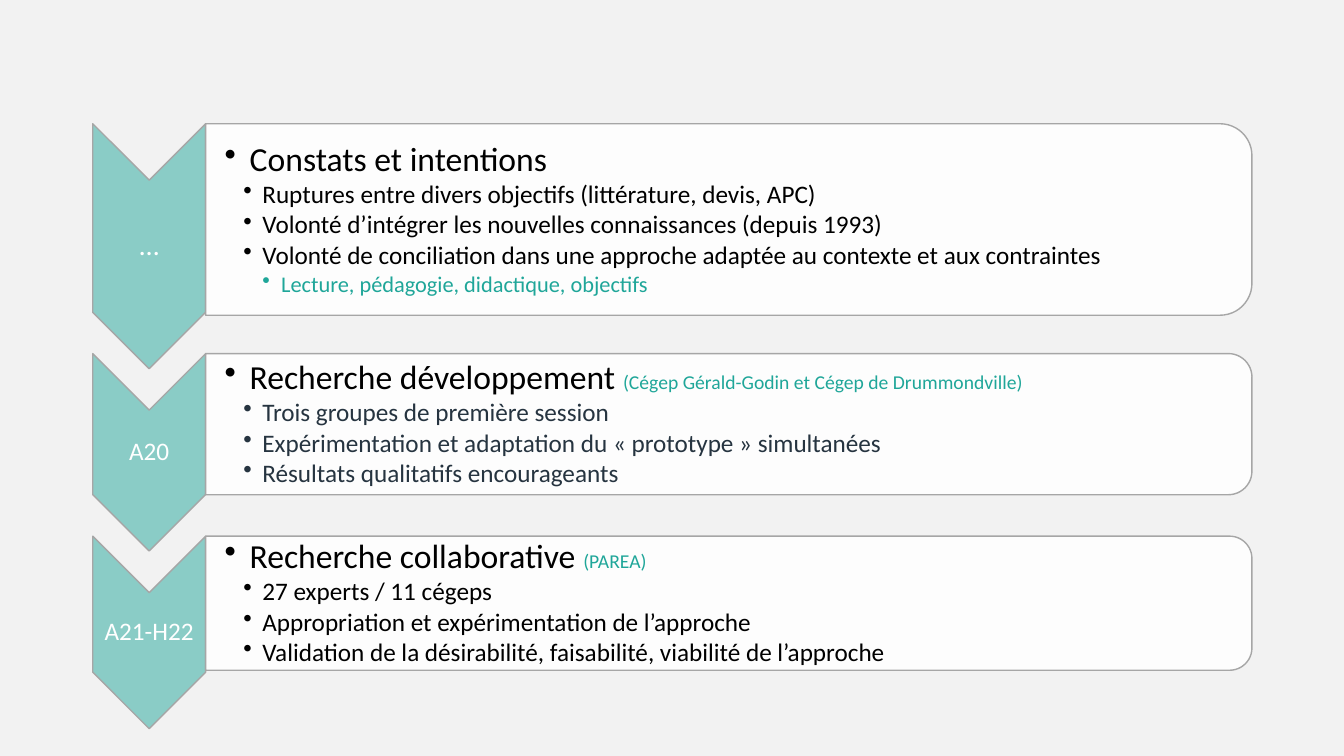
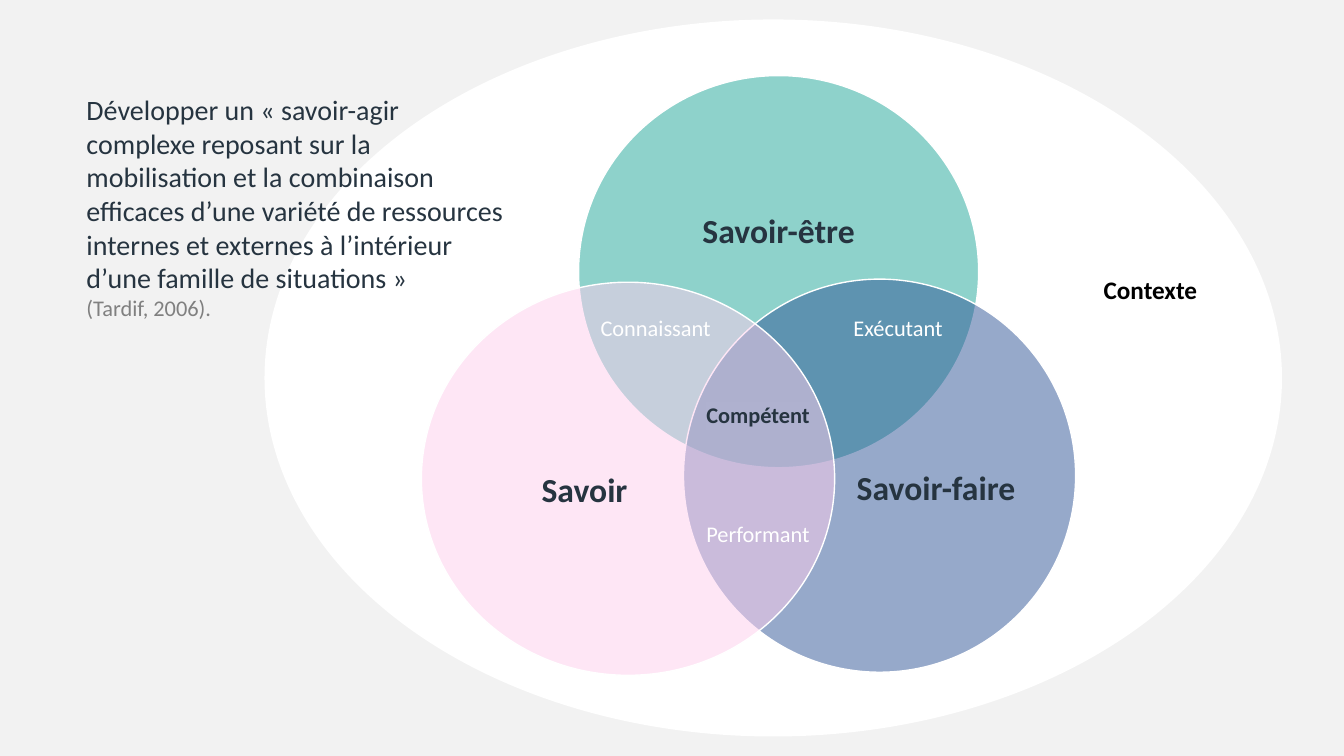
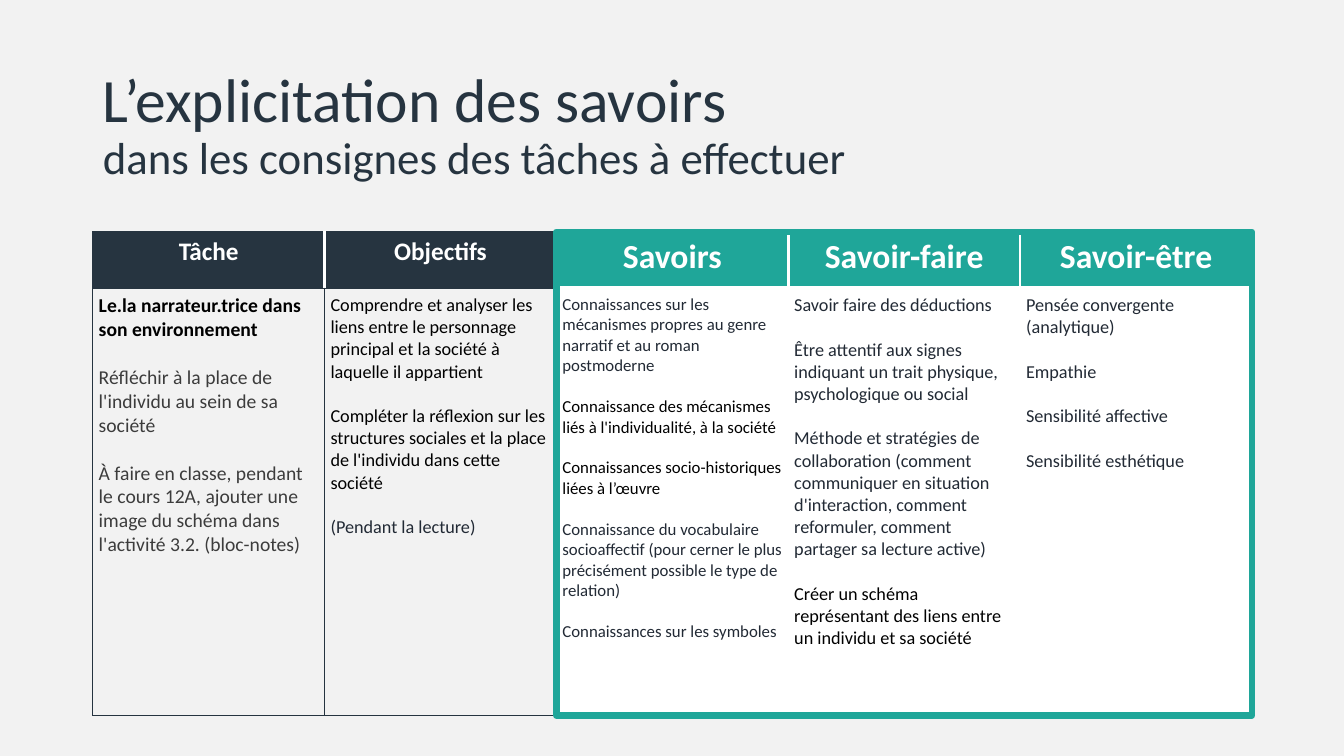
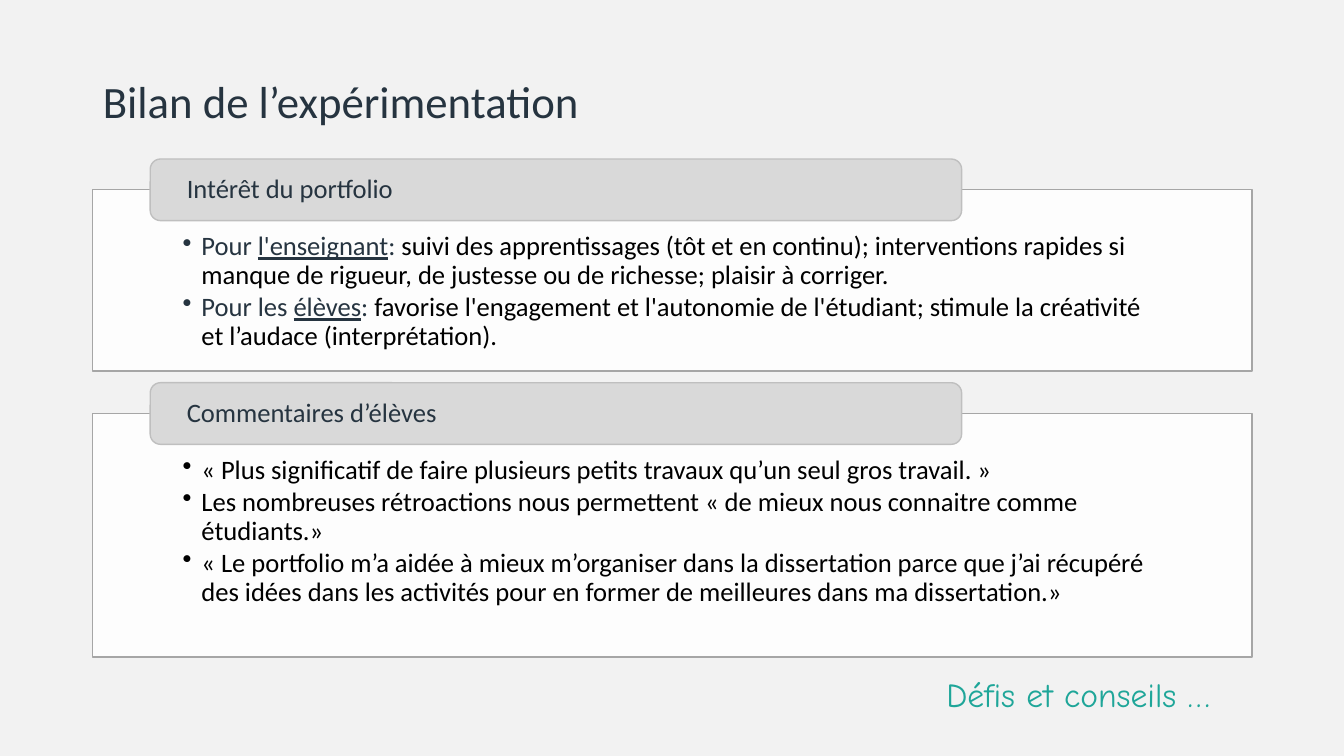
from dataclasses import dataclass, replace

from lxml.etree import SubElement
from pptx import Presentation
from pptx.dml.color import RGBColor
from pptx.enum.shapes import MSO_SHAPE
from pptx.enum.text import MSO_ANCHOR, PP_ALIGN
from pptx.oxml.ns import qn
from pptx.util import Pt

BACKGROUND = RGBColor(0xF2, 0xF2, 0xF2)
TEAL = RGBColor(0x1F, 0xA6, 0x99)
NAVY = RGBColor(0x26, 0x34, 0x40)
INK = RGBColor(0x22, 0x2A, 0x35)
BLUE = RGBColor(0x2F, 0x55, 0x97)
PINK = RGBColor(0xFE, 0xCE, 0xED)
LILAC = RGBColor(0xAF, 0xB1, 0xCF)
WHITE = RGBColor(0xFF, 0xFF, 0xFF)
BLACK = RGBColor(0, 0, 0)
CHARCOAL = RGBColor(0x3C, 0x3C, 0x3C)
GREY = RGBColor(0x80, 0x80, 0x80)
OUTLINE = RGBColor(0xA6, 0xA6, 0xA6)
TAB_FILL = RGBColor(0xD9, 0xD9, 0xD9)
TAB_LINE = RGBColor(0xBF, 0xBF, 0xBF)

TITLE_ONLY, BLANK = 5, 6
LEFT, WIDTH = 66.24, 828
TIGHT = 0.9
BULLET_GAP = 2.3
LINE_HEIGHT = 1.22


@dataclass(frozen=True)
class Style:
    size: float
    color: RGBColor
    bold: bool = False
    underline: bool = False
    font: str = "Calibri"


def set_frame(frame, insets=(7.2, 3.6, 7.2, 3.6), anchor=MSO_ANCHOR.TOP, wrap=True):
    frame.word_wrap = wrap
    frame.vertical_anchor = anchor
    frame.margin_left, frame.margin_top, frame.margin_right, frame.margin_bottom = map(Pt, insets)
    return frame


def format_run(run, style):
    font = run.font
    font.name, font.size = style.font, Pt(style.size)
    font.bold, font.underline = style.bold, style.underline
    font.color.rgb = style.color


def write(frame, *pieces, align=PP_ALIGN.LEFT, spacing=None, before=0):
    paragraph = frame.paragraphs[0]
    if paragraph.runs:
        paragraph = frame.add_paragraph()
        paragraph.space_before = Pt(before)
    paragraph.alignment = align
    if spacing:
        paragraph.line_spacing = spacing
    for text, style in pieces:
        run = paragraph.add_run()
        run.text = text
        format_run(run, style)
    return paragraph


def write_bullet(frame, margin, hanging, *pieces, level=0):
    paragraph = write(frame, *pieces)
    properties = paragraph._p.get_or_add_pPr()
    properties.set("marL", str(Pt(margin)))
    properties.set("indent", str(-Pt(hanging)))
    SubElement(properties, qn("a:buChar"), char="•")
    paragraph.level = level
    paragraph.line_spacing = TIGHT
    paragraph.space_after = Pt(BULLET_GAP)


def add_box(slide, left, top, width, height, **frame_options):
    box = slide.shapes.add_textbox(Pt(left), Pt(top), Pt(width), Pt(height))
    return set_frame(box.text_frame, **frame_options)


def add_block(slide, kind, left, top, width, height, fill, line, line_width=1, opacity=100):
    block = slide.shapes.add_shape(kind, Pt(left), Pt(top), Pt(width), Pt(height))
    block.shadow.inherit = False
    if fill is None:
        block.fill.background()
    else:
        block.fill.solid()
        block.fill.fore_color.rgb = fill
    if opacity < 100:
        color = block._element.spPr.find(qn("a:solidFill"))[0]
        SubElement(color, qn("a:alpha"), val=str(opacity * 1000))
    block.line.color.rgb = line
    block.line.width = Pt(line_width)
    return block


def add_turned_block(slide, kind, left, top, width, height, fill, opacity):
    shift = (width - height) / 2
    block = add_block(slide, kind, left + shift, top - shift, height, width,
                      fill, OUTLINE, opacity=opacity)
    block.rotation = 90


def add_title(slide, top, text, *sizes):
    title = slide.shapes.title
    title.left, title.top, title.width, title.height = map(Pt, (LEFT, top, WIDTH, 104.4))
    frame = set_frame(title.text_frame, anchor=MSO_ANCHOR.MIDDLE)
    frame.text = text
    paragraph = frame.paragraphs[0]
    paragraph.alignment = PP_ALIGN.LEFT
    paragraph.line_spacing = TIGHT
    for run, size in zip(paragraph.runs, sizes):
        format_run(run, Style(size, NAVY))


def add_stage(slide, top, chevron_height, card_height, label, label_size, bullets):
    chevron_width = 80.64
    card_left = LEFT + chevron_width
    card_width = LEFT + WIDTH - card_left
    add_turned_block(slide, MSO_SHAPE.CHEVRON, LEFT, top, chevron_width, chevron_height, TEAL, 49)
    label_frame = add_box(slide, LEFT, top, chevron_width, chevron_height,
                          insets=(0.9,) * 4, anchor=MSO_ANCHOR.MIDDLE)
    write(label_frame, (label, Style(label_size, WHITE)), align=PP_ALIGN.CENTER, spacing=TIGHT)
    add_turned_block(slide, MSO_SHAPE.ROUND_2_SAME_RECTANGLE, card_left, top,
                     card_width, card_height, WHITE, 90)
    card_frame = add_box(slide, card_left, top, card_width, card_height,
                         insets=(13.5, 1.5, 1.5, 1.5), anchor=MSO_ANCHOR.MIDDLE)
    indents = ((18, 18), (27, 13.5), (40.5, 13.5))
    for level, *pieces in bullets:
        write_bullet(card_frame, *indents[level], *pieces, level=level)


def build_stages(slide):
    heading, detail = Style(24, BLACK), Style(18, BLACK)
    source, navy_detail = Style(14, TEAL), Style(18, NAVY)
    add_stage(slide, 88.4, 175, 136.8, "…", 20, [
        (0, ("Constats et intentions", heading)),
        (1, ("Ruptures entre divers objectifs (littérature, devis, APC)", detail)),
        (1, ("Volonté d’intégrer les nouvelles connaissances (depuis 1993)", detail)),
        (1, ("Volonté de conciliation dans une approche adaptée au contexte et aux contraintes", detail)),
        (2, ("Lecture, pédagogie, didactique, objectifs", Style(16, TEAL))),
    ])
    add_stage(slide, 252.6, 141, 100.8, "A20", 18, [
        (0, ("Recherche développement ", heading),
         ("(Cégep Gérald-Godin et Cégep de Drummondville)", source)),
        (1, ("Trois groupes de première session", navy_detail)),
        (1, ("Expérimentation et adaptation du « prototype » simultanées", navy_detail)),
        (1, ("Résultats qualitatifs encourageants", navy_detail)),
    ])
    add_stage(slide, 383, 137.5, 95.8, "A21-H22", 18, [
        (0, ("Recherche collaborative ", heading), ("(PAREA)", source)),
        (1, ("27 experts / 11 cégeps", detail)),
        (1, ("Appropriation et expérimentation de l’approche", detail)),
        (1, ("Validation de la désirabilité, faisabilité, viabilité de l’approche", detail)),
    ])


def add_circle(slide, bounds, fill, label, label_bounds):
    add_block(slide, MSO_SHAPE.OVAL, *bounds, fill, WHITE, opacity=50)
    frame = add_box(slide, *label_bounds, insets=(0,) * 4, anchor=MSO_ANCHOR.MIDDLE)
    write(frame, (label, Style(24, NAVY, bold=True)), align=PP_ALIGN.CENTER, spacing=TIGHT)


def highlight(run, color):
    mark = SubElement(run._r.rPr, qn("a:highlight"))
    SubElement(mark, qn("a:srgbClr"), val=str(color))
    run._r.rPr.find(qn("a:latin")).addprevious(mark)


def build_competence(slide):
    add_block(slide, MSO_SHAPE.OVAL, 189.4, 14.4, 725.8, 511.2, WHITE, WHITE)
    circles = (
        ((413.3, 54, 285.8, 280.1), TEAL, "Savoir-être", (451.4, 103, 209.5, 126)),
        ((488.2, 199.4, 280.1, 280.8), BLUE, "Savoir-faire", (584.7, 272.2, 167.8, 154.8)),
        ((301, 201.6, 295.2, 280.8), PINK, "Savoir", (329, 273.6, 177.1, 154.8)),
    )
    for circle in circles:
        add_circle(slide, *circle)
    overlap = Style(16, WHITE)
    labels = (
        ("Connaissant", 421.9, 221, 121.7, overlap),
        ("Exécutant", 602.6, 221, 100, overlap),
        ("Performant", 497.5, 367.9, 89.3, overlap),
        ("Compétent", 497.5, 283, 100, Style(16, NAVY, bold=True)),
        ("Contexte", 781.2, 192.2, 95, Style(18, BLACK, bold=True)),
    )
    for text, left, top, width, style in labels:
        label = write(add_box(slide, left, top, width, 26.6), (text, style))
        if text == "Compétent":
            highlight(label.runs[0], LILAC)
    definition = add_box(slide, 54.7, 62.6, 316.8, 220.3)
    write(definition, (
        "Développer un « savoir-agir complexe reposant sur la mobilisation et la combinaison "
        "efficaces d’une variété de ressources internes et externes à l’intérieur d’une famille "
        "de situations »", Style(20, NAVY)))
    write(definition, ("(Tardif, 2006).", Style(16, GREY)))


def set_cell(cell, fill, sides):
    properties = cell._tc.get_or_add_tcPr()
    for side, (color, width) in zip("LRTB", sides):
        border = SubElement(properties, qn(f"a:ln{side}"), w=str(Pt(width)))
        solid = SubElement(border, qn("a:solidFill"))
        SubElement(solid, qn("a:srgbClr"), val=str(color))
    cell.fill.solid()
    cell.fill.fore_color.rgb = fill


def build_knowledge_table(slide):
    add_title(slide, 38.2, "L’explicitation des savoirs\vdans les consignes des tâches à effectuer", 44, 32)
    task, goal, knowledge = Style(14, CHARCOAL), Style(13, BLACK), Style(12, INK)
    skill = Style(13, INK)
    known = replace(knowledge, color=BLACK)
    columns = (
        ("Tâche", (
            ("Le.la narrateur.trice dans son environnement", Style(14, BLACK, bold=True)),
            ("Réfléchir à la place de l'individu au sein de sa société", task),
            ("À faire en classe, pendant le cours 12A, ajouter une image du schéma dans "
             "l'activité 3.2. (bloc-notes)", task))),
        ("Objectifs", (
            ("Comprendre et analyser les liens entre le personnage principal et la société à "
             "laquelle il appartient", goal),
            ("Compléter la réflexion sur les structures sociales et la place de l'individu dans "
             "cette société", goal),
            ("(Pendant la lecture)", skill))),
        ("Savoirs", (
            ("Connaissances sur les mécanismes propres au genre narratif et au roman postmoderne",
             knowledge),
            ("Connaissance des mécanismes liés à l'individualité, à la société", known),
            ("Connaissances socio-historiques liées à l’œuvre", known),
            ("Connaissance du vocabulaire socioaffectif (pour cerner le plus précisément possible "
             "le type de relation)", knowledge),
            ("Connaissances sur les symboles", knowledge))),
        ("Savoir-faire", (
            ("Savoir faire des déductions", skill),
            ("Être attentif aux signes indiquant un trait physique, psychologique ou social", skill),
            ("Méthode et stratégies de collaboration (comment communiquer en situation "
             "d'interaction, comment reformuler, comment partager sa lecture active)", skill),
            ("Créer un schéma représentant des liens entre un individu et sa société", goal))),
        ("Savoir-être", tuple((text, skill) for text in (
            "Pensée convergente (analytique)", "Empathie", "Sensibilité affective",
            "Sensibilité esthétique"))),
    )
    top, header_height, body_height = 165.6, 40.32, 305.28
    column_width = WIDTH / len(columns)
    table = slide.shapes.add_table(2, len(columns), Pt(LEFT), Pt(top), Pt(WIDTH),
                                   Pt(header_height + body_height)).table
    table.horz_banding = False
    table.rows[0].height, table.rows[1].height = Pt(header_height), Pt(body_height)
    thin, gap, rule = (NAVY, 1), (WHITE, 2.25), (WHITE, 3)
    for index, (heading, entries) in enumerate(columns):
        table.columns[index].width = Pt(column_width)
        header, body = table.cell(0, index), table.cell(1, index)
        framed = index >= 2
        outer = gap if index else thin
        if framed:
            set_cell(header, TEAL, (gap, gap, thin, rule))
            set_cell(body, WHITE, (gap, gap, rule, thin))
        else:
            set_cell(header, NAVY, (outer, gap, thin, thin))
            set_cell(body, BACKGROUND, (thin,) * 4)
        write(header.text_frame, (heading, Style(24 if framed else 18, WHITE, bold=True)),
              align=PP_ALIGN.CENTER)
        body.margin_left = body.margin_top = body.margin_right = body.margin_bottom = Pt(4.3)
        for entry in entries:
            write(body.text_frame, entry, before=round(entry[1].size * LINE_HEIGHT, 1))
    add_block(slide, MSO_SHAPE.RECTANGLE, LEFT + 2 * column_width, top, 3 * column_width,
              header_height + body_height, None, TEAL, line_width=4.5)


def add_panel(slide, top, height, heading, bullets):
    panel = add_block(slide, MSO_SHAPE.RECTANGLE, LEFT, top, WIDTH, height, WHITE, OUTLINE, opacity=90)
    frame = set_frame(panel.text_frame, insets=(64.2, 31, 64.2, 10.8))
    for pieces in bullets:
        write_bullet(frame, 13.5, 13.5, *pieces)
    tab = add_block(slide, MSO_SHAPE.ROUNDED_RECTANGLE, 107.3, top - 21.8, 579.6, 44, TAB_FILL, TAB_LINE)
    tab_frame = set_frame(tab.text_frame, insets=(24, 0, 24, 0), anchor=MSO_ANCHOR.MIDDLE)
    write(tab_frame, (heading, Style(19, NAVY)), spacing=TIGHT)


def build_review(slide):
    add_title(slide, 22.3, "Bilan de l’expérimentation", 32)
    text, lead = Style(19, BLACK), Style(19, NAVY)
    audience = replace(lead, underline=True)
    add_panel(slide, 135.4, 129.6, "Intérêt du portfolio", (
        (("Pour ", lead), ("l'enseignant", audience), (": ", lead),
         ("suivi des apprentissages (tôt et en continu); interventions rapides si manque de "
          "rigueur, de justesse ou de richesse; plaisir à corriger.", text)),
        (("Pour les ", lead), ("élèves", audience), (": ", lead),
         ("favorise l'engagement et l'autonomie de l'étudiant; stimule la créativité et "
          "l’audace (interprétation).", text)),
    ))
    add_panel(slide, 295.2, 174.2, "Commentaires d’élèves", (
        (("« Plus significatif de faire plusieurs petits travaux qu’un seul gros travail. »", text),),
        (("Les nombreuses rétroactions nous permettent « de mieux nous connaitre comme "
          "étudiants.»", text),),
        (("« Le portfolio m’a aidée à mieux m’organiser dans la dissertation parce que j’ai "
          "récupéré des idées dans les activités pour en former de meilleures dans ma "
          "dissertation.»", text),),
    ))
    next_topic = add_box(slide, 619.2, 454.6, 301.7, 80, anchor=MSO_ANCHOR.MIDDLE)
    write(next_topic, ("Défis et conseils …", Style(24, TEAL, font="Comic Neue")),
          align=PP_ALIGN.CENTER, spacing=1.1)


def main():
    deck = Presentation()
    deck.slide_width, deck.slide_height = Pt(960), Pt(540)
    background = deck.slide_master.background.fill
    background.solid()
    background.fore_color.rgb = BACKGROUND
    pages = (
        (BLANK, build_stages),
        (BLANK, build_competence),
        (TITLE_ONLY, build_knowledge_table),
        (TITLE_ONLY, build_review),
    )
    for layout, build in pages:
        build(deck.slides.add_slide(deck.slide_layouts[layout]))
    deck.save("out.pptx")


if __name__ == "__main__":
    main()
